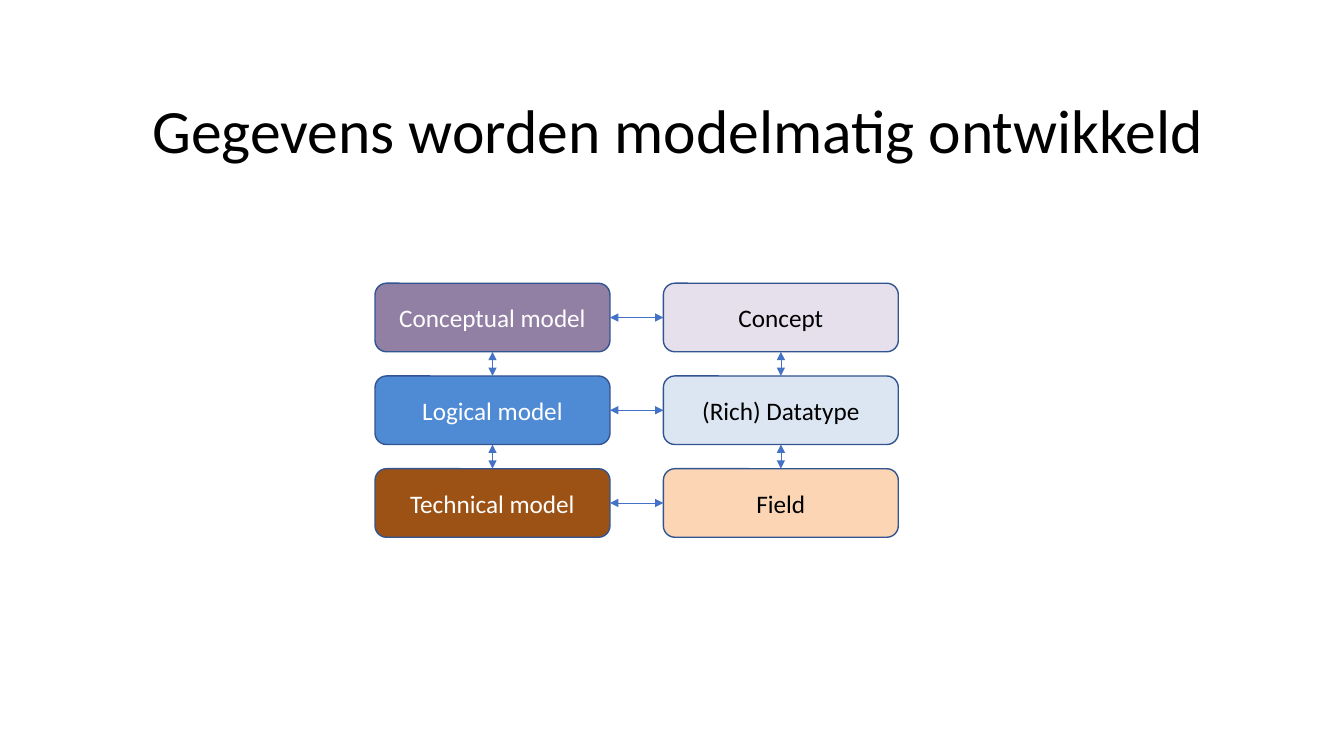
from lxml import etree
from pptx import Presentation
from pptx.dml.color import RGBColor
from pptx.enum.shapes import MSO_CONNECTOR, MSO_SHAPE
from pptx.enum.text import MSO_ANCHOR, PP_ALIGN
from pptx.oxml.ns import qn
from pptx.util import Inches, Pt

STRAIGHT = MSO_CONNECTOR.STRAIGHT
ROUNDED = MSO_SHAPE.ROUNDED_RECTANGLE
MIDDLE = MSO_ANCHOR.MIDDLE
LEFT, CENTER = PP_ALIGN.LEFT, PP_ALIGN.CENTER

TITLE = "Gegevens worden modelmatig ontwikkeld"
LEVELS = [
    (("Conceptual model", "917FA4"), ("Concept", "E6E0EC")),
    (("Logical model", "4F8AD4"), ("(Rich) Datatype", "DCE6F2")),
    (("Technical model", "9D5215"), ("Field", "FCD5B5")),
]
TEXT_COLORS = ("FFFFFF", "000000")
BORDER, ARROW = "325491", "4472C4"

SLIDE_W, SLIDE_H = 13.33, 7.5
TITLE_AREA = (1.41, 0.6, 11.5, 1.45)
GRID_LEFT, GRID_TOP = 3.72, 2.81
BOX_W, BOX_H = 2.33, 0.68
COLUMN_STEP, ROW_STEP = 2.86, 0.92
TOP_SITE, LEFT_SITE, BOTTOM_SITE, RIGHT_SITE = range(4)


def rgb(value):
    return RGBColor.from_string(value)


def write(holder, text, size=18, color="000000", align=CENTER, spacing=1.0):
    frame = holder.text_frame
    frame.word_wrap = True
    frame.vertical_anchor = MIDDLE
    paragraph = frame.paragraphs[0]
    paragraph.alignment = align
    paragraph.line_spacing = spacing
    run = paragraph.add_run()
    run.text = text
    run.font.name = "Calibri"
    run.font.size = Pt(size)
    run.font.color.rgb = rgb(color)


def add_box(slide, row, column, label, fill):
    box = slide.shapes.add_shape(
        ROUNDED,
        Inches(GRID_LEFT + column * COLUMN_STEP),
        Inches(GRID_TOP + row * ROW_STEP),
        Inches(BOX_W),
        Inches(BOX_H),
    )
    box.shadow.inherit = False
    box.fill.solid()
    box.fill.fore_color.rgb = rgb(fill)
    box.line.color.rgb = rgb(BORDER)
    box.line.width = Pt(1)
    write(box, label, color=TEXT_COLORS[column])
    return box


def link(slide, start, start_site, end, end_site):
    arrow = slide.shapes.add_connector(STRAIGHT, 0, 0, 0, 0)
    arrow.begin_connect(start, start_site)
    arrow.end_connect(end, end_site)
    arrow.line.color.rgb = rgb(ARROW)
    arrow.line.width = Pt(0.5)
    outline = arrow.line._get_or_add_ln()
    for tip in ("a:headEnd", "a:tailEnd"):
        etree.SubElement(outline, qn(tip), type="triangle")
    etree.SubElement(arrow._element.spPr, qn("a:effectLst"))


def main():
    deck = Presentation()
    deck.slide_width, deck.slide_height = Inches(SLIDE_W), Inches(SLIDE_H)
    slide = deck.slides.add_slide(deck.slide_layouts[5])

    title = slide.shapes.title
    title.left, title.top, title.width, title.height = map(Inches, TITLE_AREA)
    write(title, TITLE, size=44, align=LEFT, spacing=0.9)

    boxes = [
        [add_box(slide, row, column, *cell) for column, cell in enumerate(level)]
        for row, level in enumerate(LEVELS)
    ]
    for model, element in boxes:
        link(slide, model, RIGHT_SITE, element, LEFT_SITE)
    for upper_level, lower_level in zip(boxes, boxes[1:]):
        for upper, lower in zip(upper_level, lower_level):
            link(slide, upper, BOTTOM_SITE, lower, TOP_SITE)

    deck.save("out.pptx")


if __name__ == "__main__":
    main()
